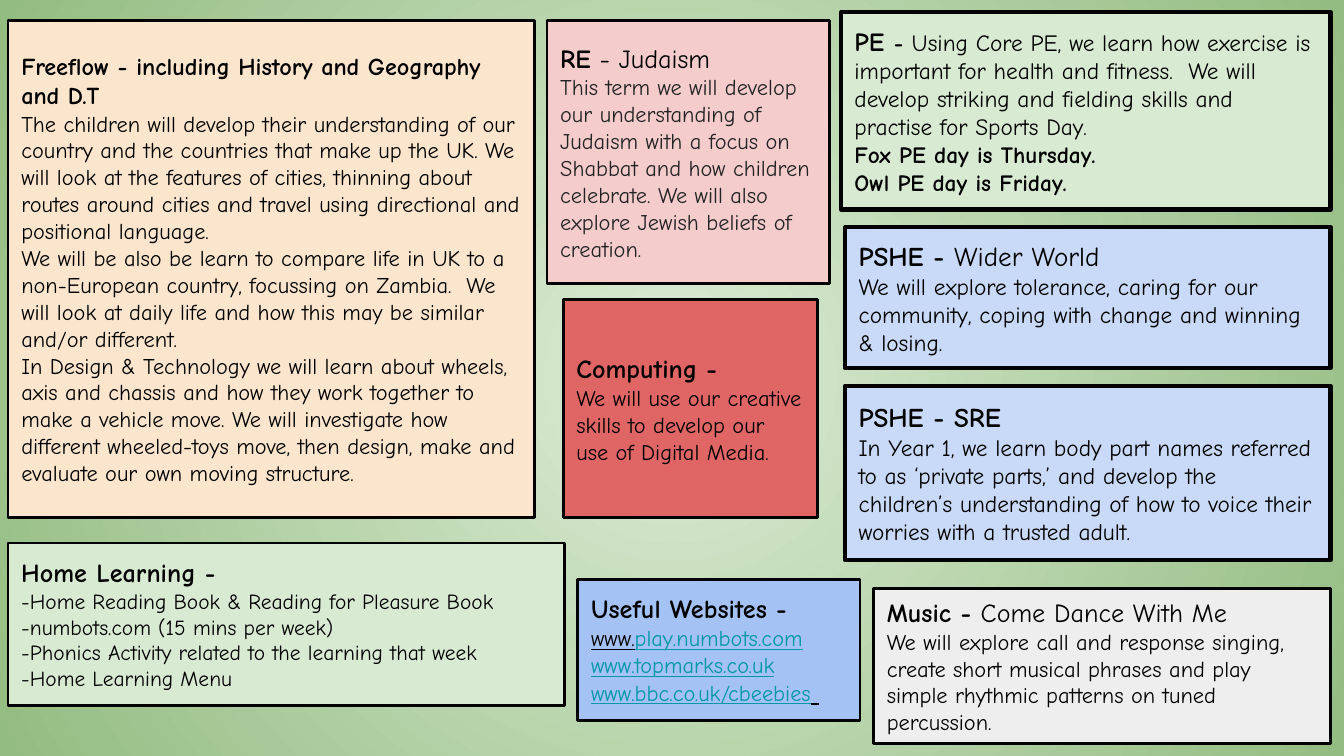
"""Build a one-slide overview of a school term's topics."""
import dataclasses

import lxml.etree
import pptx
import pptx.dml.color
import pptx.enum.shapes
import pptx.enum.text
import pptx.oxml.ns
import pptx.util

Inches = pptx.util.Inches
Anchor = pptx.enum.text.MSO_ANCHOR
Fit = pptx.enum.text.MSO_AUTO_SIZE


@dataclasses.dataclass(frozen=True)
class Theme:
    font: str = "Comic Neue"
    ink: str = "000000"
    grey: str = "222222"
    link: str = "0097A7"
    glow: str = "DCECD5"
    edge: str = "93BC81"
    peach: str = "FCE5CD"
    pale: str = "EEEEEE"
    blue: str = "A4C2F4"
    sky: str = "C9DAF8"
    red: str = "E06666"
    green: str = "D9EAD3"
    pink: str = "F4CCCC"
    tiny: float = 11.5
    body: float = 12
    wide: float = 12.5
    lead: float = 13
    head: float = 14
    large: float = 14.5
    thin: float = 1.5
    thick: float = 2.25


T = Theme()


def rgb(code):
    return pptx.dml.color.RGBColor.from_string(code)


def run(text, size=T.body, color=T.ink, **form):
    return text, size, color, form


def bold(text, size=T.head):
    return run(text, size, bold=True)


def link(text):
    return run(text, color=T.link, underline=True)


def paint(slide):
    fill = slide.background.fill
    fill.gradient()
    for stop, color, place in zip(fill.gradient_stops, (T.glow, T.edge), (0, 1)):
        stop.color.rgb = rgb(color)
        stop.position = place
    qn = pptx.oxml.ns.qn
    grad = next(slide.background._cSld.iter(qn("a:gradFill")))
    grad.remove(grad.find(qn("a:lin")))
    round_ = lxml.etree.SubElement(grad, qn("a:path"), path="circle")
    sides = dict.fromkeys("ltrb", "50000")
    lxml.etree.SubElement(round_, qn("a:fillToRect"), sides)


def write(para, runs):
    para.alignment = pptx.enum.text.PP_ALIGN.LEFT
    for text, size, color, form in runs:
        item = para.add_run()
        item.text = text
        look = {"name": T.font, "size": pptx.util.Pt(size), "bold": False, **form}
        for key, value in look.items():
            setattr(item.font, key, value)
        item.font.color.rgb = rgb(color)


def panel(slide, area, fill, paras, line=T.thin, grow=False):
    kind = pptx.enum.shapes.MSO_SHAPE.RECTANGLE
    box = slide.shapes.add_shape(kind, *map(Inches, area))
    box.shadow.inherit = False
    box.fill.solid()
    box.fill.fore_color.rgb = rgb(fill)
    box.line.color.rgb = rgb(T.ink)
    box.line.width = pptx.util.Pt(line)
    frame = box.text_frame
    look = dict.fromkeys(
        ("margin_left", "margin_top", "margin_right", "margin_bottom"), Inches(0.1))
    look.update(
        word_wrap=True,
        vertical_anchor=Anchor.TOP if grow else Anchor.MIDDLE,
        auto_size=Fit.SHAPE_TO_FIT_TEXT if grow else Fit.NONE)
    for key, value in look.items():
        setattr(frame, key, value)
    for index, runs in enumerate(paras):
        write(frame.add_paragraph() if index else frame.paragraphs[0], runs)


def left(slide):
    panel(slide, (0.06, 0.15, 3.92, 3.7), T.peach, [
        [bold("Freeflow - including History and Geography and D.T", T.lead)],
        [run("The children will develop their understanding of our country and "
             "the countries that make up the UK. We will look at the features of "
             "cities, thinning about routes around cities and travel using "
             "directional and positional language.")],
        [run("We will be also be learn to compare life in UK to a non-European "
             "country, focussing on Zambia.  We will look at daily life and how "
             "this may be similar and/or different.")],
        [run("In Design & Technology we will learn about wheels, axis and chassis "
             "and how they work together to make a vehicle move. We will "
             "investigate how different wheeled-toys move, then design, make and "
             "evaluate our own moving structure.")]])
    tasks = ("-Home Reading Book & Reading for Pleasure Book",
             "-numbots.com (15 mins per week)",
             "-Phonics Activity related to the learning that week",
             "-Home Learning Menu")
    panel(slide, (0.06, 4.04, 4.14, 1.21), T.green,
          [[bold("Home Learning -")]] + [[run(task, T.tiny)] for task in tasks],
          grow=True)


def middle(slide):
    panel(slide, (4.07, 0.15, 2.1, 1.96), T.pink, [
        [bold("RE"), run(" - Judaism", T.head)],
        [run("This term we will develop our understanding of Judaism with a focus "
             "on Shabbat and how children celebrate. We will also explore Jewish "
             "beliefs of creation.", color=T.grey)]])
    panel(slide, (4.19, 2.23, 1.89, 1.62), T.red, [
        [bold("Computing -")],
        [run("We will use our creative skills to develop our use of Digital "
             "Media.")]])
    panel(slide, (4.3, 4.31, 2.1, 1.05), T.blue, [
        [bold("Useful Websites -")],
        [run("www.", underline=True), link("play.numbots.com")],
        [link("www.topmarks.co.uk")],
        [link("www.bbc.co.uk/cbeebies"), run(" ", T.wide, underline=True)]],
        grow=True)


def right(slide):
    panel(slide, (6.26, 0.09, 3.64, 1.47), T.green, [
        [bold("PE "), bold("- ", T.wide),
         run("Using Core PE, we learn how exercise is important for health and "
             "fitness.  We will develop striking and fielding skills and practise "
             "for Sports Day.", T.wide)],
        [bold("Fox PE day is Thursday.", T.wide)],
        [bold("Owl PE day is Friday.", T.wide)]], T.thick)
    panel(slide, (6.29, 1.69, 3.61, 1.05), T.sky, [
        [bold("PSHE - ", T.large), run("Wider World", T.large)],
        [run("We will explore tolerance, caring for our community, coping with "
             "change and winning & losing.", T.wide)]], T.thick)
    panel(slide, (6.29, 2.87, 3.61, 1.3), T.sky, [
        [bold("PSHE - SRE", T.large)],
        [run("In Year 1, we learn body part names referred to as ‘private parts,’ "
             "and develop the children’s understanding of how to voice their "
             "worries with a trusted adult.", T.wide)]], T.thick)
    panel(slide, (6.5, 4.38, 3.4, 1.15), T.pale, [
        [bold("Music - "), run("Come Dance With Me", T.head)],
        [run("We will explore call and response singing, create short musical "
             "phrases and play simple rhythmic patterns on tuned percussion.")]])


def main():
    deck = pptx.Presentation()
    deck.slide_width = Inches(10)
    deck.slide_height = Inches(10 * 9 / 16)
    slide = deck.slides.add_slide(deck.slide_layouts[6])
    paint(slide)
    left(slide)
    middle(slide)
    right(slide)
    deck.save("out.pptx")


if __name__ == "__main__":
    main()
